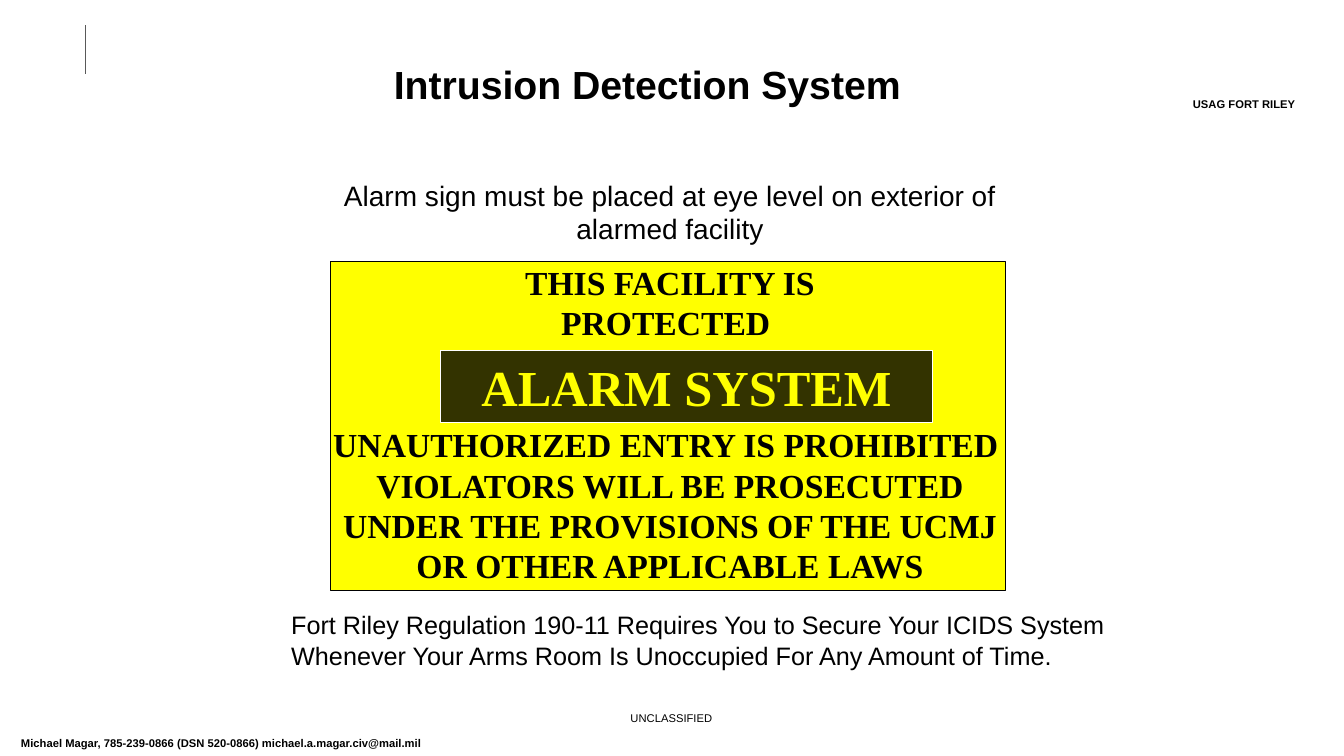
from lxml.etree import SubElement
from pptx import Presentation
from pptx.dml.color import RGBColor
from pptx.enum.shapes import MSO_CONNECTOR, MSO_SHAPE
from pptx.enum.text import MSO_ANCHOR, PP_ALIGN
from pptx.oxml.ns import qn
from pptx.util import Inches, Pt

COLORS = {"black": "000000", "white": "FFFFFF", "gray": "595959",
          "yellow": "FFFF00", "olive": "333300"}
SANS, SERIF = "Arial", "Times New Roman"
LEFT, MID = PP_ALIGN.LEFT, PP_ALIGN.CENTER


def rgb(name):
    return RGBColor.from_string(COLORS[name])


def write(frame, lines, size, font=SANS, bold=False, align=MID,
          color="black", wrap=True, anchor=MSO_ANCHOR.TOP):
    frame.word_wrap = wrap
    frame.vertical_anchor = anchor
    for i, line in enumerate(lines):
        para = frame.paragraphs[0] if i == 0 else frame.add_paragraph()
        para.alignment = align
        run = para.add_run()
        run.text = line
        run.font.name = font
        run.font.size = Pt(size)
        run.font.bold = bold
        run.font.color.rgb = rgb(color)


def label(slide, box, lines, size, **style):
    text = slide.shapes.add_textbox(*map(Inches, box))
    write(text.text_frame, lines, size, **style)


def panel(slide, box, fill, edge, width):
    rect = slide.shapes.add_shape(MSO_SHAPE.RECTANGLE, *map(Inches, box))
    rect.shadow.inherit = False
    rect.fill.solid()
    rect.fill.fore_color.rgb = rgb(fill)
    rect.line.color.rgb = rgb(edge)
    rect.line.width = Pt(width)
    return rect


def frame_marks(slide, x, y, w, h):
    # Short rule at the top left
    rule = slide.shapes.add_connector(
        MSO_CONNECTOR.STRAIGHT, Inches(x + 0.85), Inches(y + 0.25),
        Inches(x + 0.85), Inches(y + 0.73))
    rule.line.color.rgb = rgb("gray")
    rule.line.width = Pt(0.75)
    SubElement(rule._element.spPr, qn("a:effectLst"))

    # Contact, marking and unit name
    label(slide, (x + 0.11, y + h - 0.24, 8.3, 0.24),
          ["Michael Magar, 785-239-0866 (DSN 520-0866) "
           "michael.a.magar.civ@mail.mil"], 8, bold=True, align=LEFT)
    label(slide, (x + 4.91, y + h - 0.49, 3.5, 0.24), ["UNCLASSIFIED"], 8)
    label(slide, (x + w - 1.87, y + 0.92, 1.76, 0.24),
          ["USAG FORT RILEY"], 8, bold=True)


def alarm_sign(slide, x, y, w, h):
    # Yellow board
    panel(slide, (x, y, w, h), "yellow", "black", 0.75)
    label(slide, (x + 0.9, y - 0.04, 4.93, 0.9),
          ["THIS FACILITY IS PROTECTED "], 24, font=SERIF, bold=True)

    # Dark name plate
    plate = panel(slide, (x + 1.09, y + 0.89, 4.88, 0.71),
                  "olive", "white", 1)
    write(plate.text_frame, ["ALARM SYSTEM"], 36, font=SERIF, bold=True,
          color="yellow", anchor=MSO_ANCHOR.MIDDLE)

    # Warning
    label(slide, (x - 0.11, y + 1.57, 6.95, 1.72),
          ["UNAUTHORIZED ENTRY IS PROHIBITED ",
           "VIOLATORS WILL BE PROSECUTED",
           "UNDER THE PROVISIONS OF THE UCMJ",
           "OR OTHER APPLICABLE LAWS"],
          24, font=SERIF, bold=True, wrap=False)


def body(slide, x, y, w, h):
    # Title and placement rule
    label(slide, (x + 0.38, y, 6.5, 0.6),
          ["Intrusion Detection System"], 28, bold=True)
    label(slide, (x, y + 1.17, 7.71, 0.84),
          ["Alarm sign must be placed at eye level on exterior of "
           "alarmed facility"], 20)

    alarm_sign(slide, x + 0.49, y + 2.04, 6.69, 3.27)

    # Regulation note
    label(slide, (x, y + h - 0.71, w, 0.71),
          ["Fort Riley Regulation 190-11 Requires You to Secure Your ICIDS "
           "System Whenever Your Arms Room Is Unoccupied For Any Amount "
           "of Time."], 18, align=LEFT)


def main():
    deck = Presentation()
    deck.slide_width, deck.slide_height = Inches(13.33), Inches(7.5)
    slide = deck.slides.add_slide(deck.slide_layouts[6])
    frame_marks(slide, 0, 0, 13.33, 7.5)
    body(slide, 2.79, 0.55, 8.5, 6.16)
    deck.save("out.pptx")


if __name__ == "__main__":
    main()
